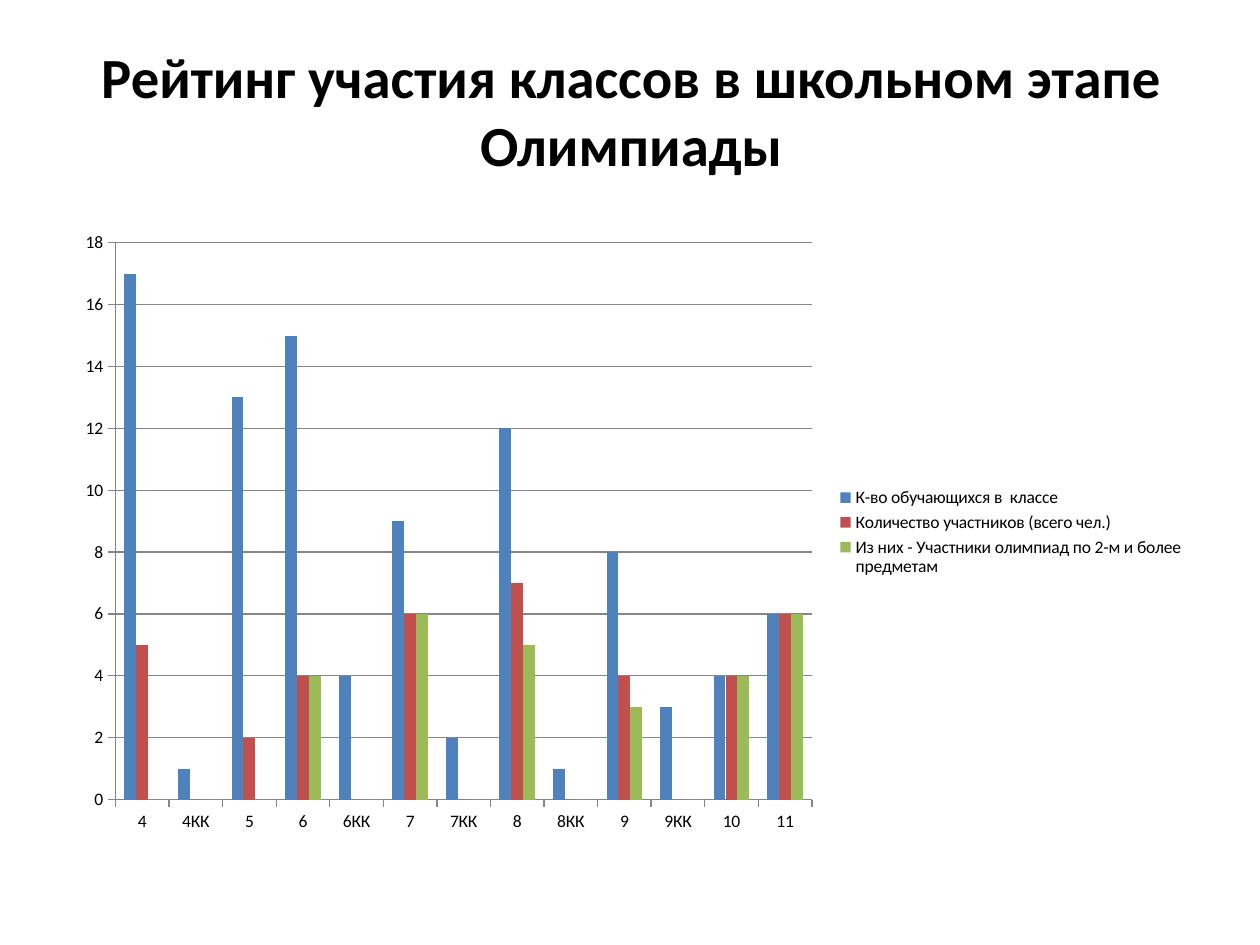
"""Build a slide with a title and a clustered column chart of olympiad participation."""
from typing import NamedTuple

import pptx
import pptx.chart.data
import pptx.dml.color
import pptx.enum.chart
import pptx.enum.text
import pptx.util

Inches = pptx.util.Inches
Pt = pptx.util.Pt


class Series(NamedTuple):
    name: str
    values: tuple[int, ...]
    color: str


FONT = "Calibri"
BLACK = "000000"
GRAY = "868686"
TITLE = "Рейтинг участия классов в школьном этапе Олимпиады\v"
CLASSES = ("4", "4КК", "5", "6", "6КК", "7", "7КК", "8", "8КК", "9", "9КК", "10", "11")
SERIES = (
    Series("К-во обучающихся в  классе",
           (17, 1, 13, 15, 4, 9, 2, 12, 1, 8, 3, 4, 6), "4F81BD"),
    Series("Количество участников (всего чел.)",
           (5, 0, 2, 4, 0, 6, 0, 7, 0, 4, 0, 4, 6), "C0504D"),
    Series("Из них - Участники олимпиад по 2-м и более предметам",
           (0, 0, 0, 4, 0, 6, 0, 5, 0, 3, 0, 4, 6), "9BBB59"),
)


def rgb(value: str) -> pptx.dml.color.RGBColor:
    return pptx.dml.color.RGBColor.from_string(value)


def set_font(font, size: float, bold: bool = False) -> None:
    font.name = FONT
    font.size = Pt(size)
    font.bold = bold
    font.color.rgb = rgb(BLACK)


def set_line(line) -> None:
    line.color.rgb = rgb(GRAY)
    line.width = Pt(0.75)


def add_title(s) -> None:
    tf = s.shapes.add_textbox(Inches(0.51), Inches(0.52), Inches(9), Inches(1.25)).text_frame
    tf.word_wrap = True
    tf.vertical_anchor = pptx.enum.text.MSO_ANCHOR.MIDDLE
    p = tf.paragraphs[0]
    p.text = TITLE
    p.alignment = pptx.enum.text.PP_ALIGN.CENTER
    set_font(p.font, 32.4, bold=True)


def add_rating_chart(s) -> None:
    data = pptx.chart.data.CategoryChartData(number_format="General")
    data.categories = CLASSES
    for series in SERIES:
        data.add_series(series.name, series.values)
    chart = s.shapes.add_chart(
        pptx.enum.chart.XL_CHART_TYPE.COLUMN_CLUSTERED,
        Inches(0.5), Inches(1.75), Inches(9), Inches(4.95), data).chart
    set_font(chart.font, 10)
    chart.has_title = False
    chart.has_legend = True
    chart.legend.position = pptx.enum.chart.XL_LEGEND_POSITION.RIGHT
    chart.legend.include_in_layout = False

    plot = chart.plots[0]
    plot.gap_width = 150
    plot.vary_by_categories = False
    for drawn, series in zip(plot.series, SERIES):
        drawn.format.fill.solid()
        drawn.format.fill.fore_color.rgb = rgb(series.color)

    for axis in (chart.category_axis, chart.value_axis):
        axis.major_tick_mark = pptx.enum.chart.XL_TICK_MARK.OUTSIDE
        set_line(axis.format.line)
    chart.value_axis.has_major_gridlines = True
    set_line(chart.value_axis.major_gridlines.format.line)


def main() -> None:
    prs = pptx.Presentation()
    prs.slide_width = Inches(10)
    prs.slide_height = Inches(7.5)
    s = prs.slides.add_slide(prs.slide_layouts[6])
    add_title(s)
    add_rating_chart(s)
    prs.save("out.pptx")


if __name__ == "__main__":
    main()
